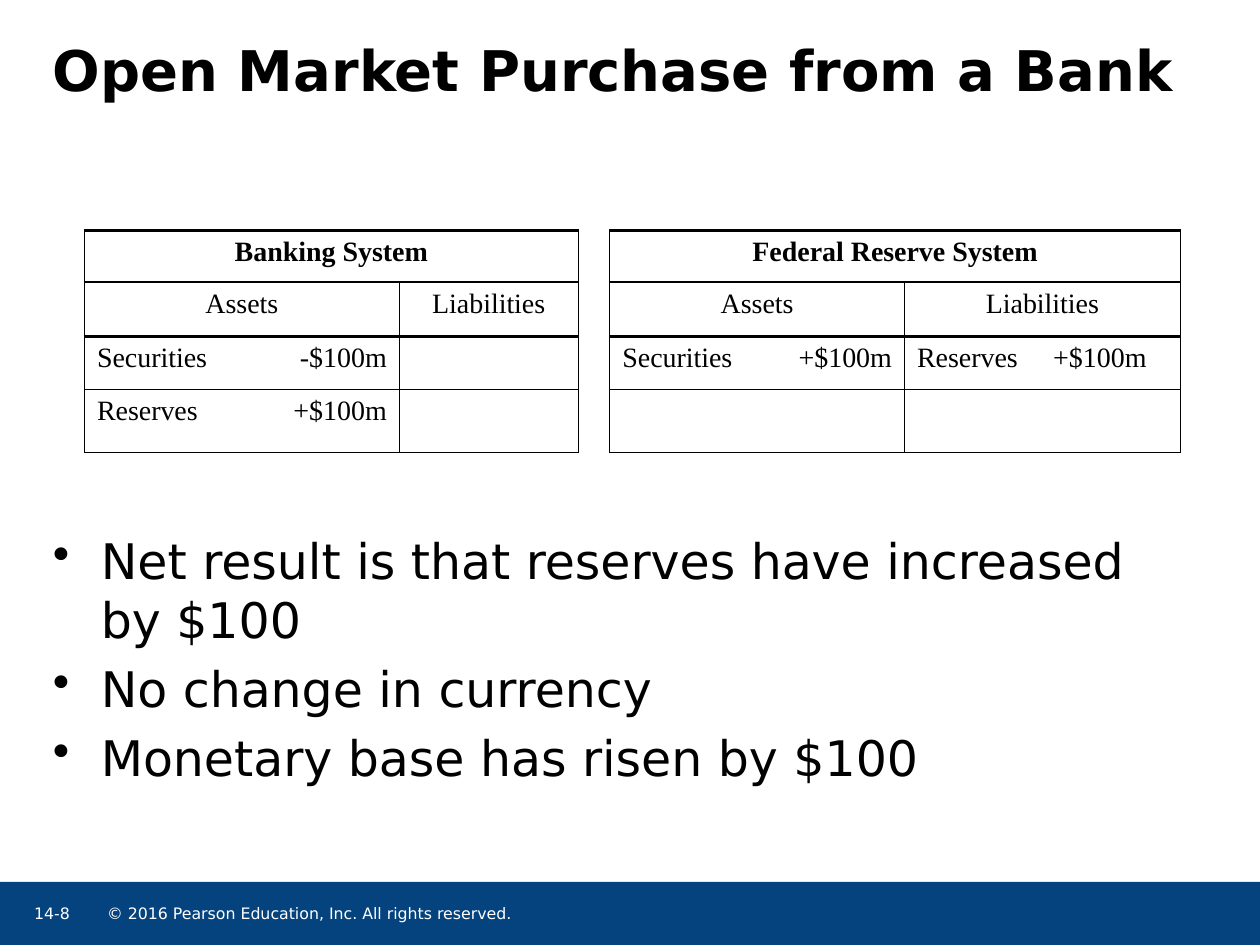
from dataclasses import dataclass

from lxml import etree
from pptx import Presentation
from pptx import util as u
from pptx.dml.color import RGBColor
from pptx.enum import shapes, text
from pptx.oxml import ns

EMU_PER_PX = 9144  # 100 px to the inch
BLACK = RGBColor(0x00, 0x00, 0x00)
WHITE = RGBColor(0xFF, 0xFF, 0xFF)
NAVY = RGBColor(0x04, 0x43, 0x7D)
SANS = "DejaVu Sans"
SERIF = "Times New Roman"
NO_STYLE = "{2D5ABB26-0587-4C30-8999-92F81FD0307C}"

TITLE = {"name": SANS, "size": u.Pt(32), "bold": True}
BODY = {"name": SANS, "size": u.Pt(28)}
FOOTER = {"name": SANS, "size": u.Pt(9)}
CELL = {"name": SERIF, "size": u.Pt(16)}

COLUMN_WIDTHS = [126, 124, 95, 47, 25, 117, 117, 108, 111]
ROW_HEIGHTS = [41, 43, 42, 50]
ROW_SPANS = [4, 2, 1, 1]
GAP_COLUMN = 4
PANEL_COLUMNS = 4


@dataclass(frozen=True)
class Box:
    left: int
    top: int
    width: int
    height: int

    def emu(self) -> list[int]:
        return [px(v) for v in (self.left, self.top, self.width, self.height)]


@dataclass(frozen=True)
class Label:
    box: Box
    lines: tuple[str, ...]
    style: dict
    color: RGBColor = BLACK
    anchor: text.MSO_ANCHOR = text.MSO_ANCHOR.TOP
    bulleted: bool = False


@dataclass(frozen=True)
class Account:
    """One T-account: cell wording row by row, and its outer line widths."""
    first_column: int
    rows: tuple[tuple[str, ...], ...]
    left_line: float
    right_line: float


LABELS = [
    Label(Box(85, 717, 590, 20),
          ("© 2016 Pearson Education, Inc. All rights reserved.",), FOOTER, WHITE),
    Label(Box(27, 717, 39, 20), ("14-8",), FOOTER, WHITE),
    Label(Box(42, 0, 917, 109), ("Open Market Purchase from a Bank",), TITLE,
          anchor=text.MSO_ANCHOR.MIDDLE),
    Label(Box(42, 421, 908, 254),
          ("Net result is that reserves have increased by $100",
           "No change in currency",
           "Monetary base has risen by $100"), BODY, bulleted=True),
]

ACCOUNTS = [
    Account(0, (("Banking System",), ("Assets", "Liabilities"),
                ("Securities", "-$100m", "", ""),
                ("Reserves", "+$100m", "", "")), 1, 0.5),
    Account(5, (("Federal Reserve System",), ("Assets", "Liabilities"),
                ("Securities", "+$100m", "Reserves", "+$100m"),
                ("", "", "", "")), 0.5, 1),
]


def px(value: int) -> int:
    return value * EMU_PER_PX


def set_font(font, style: dict, color: RGBColor) -> None:
    for name, value in style.items():
        setattr(font, name, value)
    font.color.rgb = color


def add_bullet(paragraph) -> None:
    properties = paragraph._p.get_or_add_pPr()
    properties.set("marL", str(px(38)))
    properties.set("indent", str(px(-38)))
    etree.SubElement(properties, ns.qn("a:buChar")).set("char", "•")


def add_label(slide, label: Label) -> None:
    frame = slide.shapes.add_textbox(*label.box.emu()).text_frame
    settings = {"word_wrap": True, "vertical_anchor": label.anchor, "margin_left": 0,
                "margin_top": 0, "margin_right": 0, "margin_bottom": 0}
    for name, value in settings.items():
        setattr(frame, name, value)
    for index, line in enumerate(label.lines):
        paragraph = frame.add_paragraph() if index else frame.paragraphs[0]
        if label.bulleted:
            add_bullet(paragraph)
        if index:
            paragraph.space_before = u.Pt(6)
        paragraph.add_run().text = line
        set_font(paragraph.runs[0].font, label.style, label.color)


def set_borders(cell, widths: dict[str, float]) -> None:
    properties = cell._tc.get_or_add_tcPr()
    for side in "LRTB":
        width = widths.get(side, 0)
        line = etree.SubElement(properties, ns.qn(f"a:ln{side}"))
        if width:
            line.set("w", str(u.Pt(width)))
            fill = etree.SubElement(line, ns.qn("a:solidFill"))
            etree.SubElement(fill, ns.qn("a:srgbClr")).set("val", str(BLACK))
        else:
            etree.SubElement(line, ns.qn("a:noFill"))
    cell.fill.background()


def fill_account(table, account: Account) -> None:
    verticals = {0: account.left_line, 2: 1, PANEL_COLUMNS: account.right_line}
    horizontals = [1.5, 1, 1.5, 1, 1]
    for row, words in enumerate(account.rows):
        span = ROW_SPANS[row]
        for index, word in enumerate(words):
            start = index * span
            column = account.first_column + start
            cell = table.cell(row, column)
            if span > 1:
                cell.merge(table.cell(row, column + span - 1))
            set_borders(cell, {"L": verticals.get(start, 0),
                               "R": verticals.get(start + span, 0),
                               "T": horizontals[row], "B": horizontals[row + 1]})
            paragraph = cell.text_frame.paragraphs[0]
            if span > 1:
                paragraph.alignment = text.PP_ALIGN.CENTER
            elif start == 1:
                paragraph.alignment = text.PP_ALIGN.RIGHT
            if word:
                paragraph.add_run().text = word
                set_font(paragraph.runs[0].font, {**CELL, "bold": row == 0}, BLACK)


def add_accounts(slide) -> None:
    box = Box(67, 183, sum(COLUMN_WIDTHS), sum(ROW_HEIGHTS))
    frame = slide.shapes.add_table(len(ROW_HEIGHTS), len(COLUMN_WIDTHS), *box.emu())
    table = frame.table
    table.first_row = table.horz_banding = False
    table._tbl.tblPr.find(ns.qn("a:tableStyleId")).text = NO_STYLE
    for column, width in zip(table.columns, COLUMN_WIDTHS):
        column.width = px(width)
    for row, height in zip(table.rows, ROW_HEIGHTS):
        row.height = px(height)
    for account in ACCOUNTS:
        fill_account(table, account)

    # Blank gap between the two accounts
    sides = {"L": ACCOUNTS[0].right_line, "R": ACCOUNTS[1].left_line}
    table.cell(0, GAP_COLUMN).merge(table.cell(2, GAP_COLUMN))
    for row in (0, 3):
        set_borders(table.cell(row, GAP_COLUMN), sides)


def main() -> None:
    presentation = Presentation()
    presentation.slide_width, presentation.slide_height = px(1000), px(750)
    slide = presentation.slides.add_slide(presentation.slide_layouts[6])

    # Footer band
    band = slide.shapes.add_shape(shapes.MSO_SHAPE.RECTANGLE, *Box(0, 700, 1000, 50).emu())
    band.shadow.inherit = False
    band.fill.solid()
    band.fill.fore_color.rgb = NAVY
    band.line.fill.background()

    # Footer, title and body text
    for label in LABELS:
        add_label(slide, label)

    # T-accounts
    add_accounts(slide)
    presentation.save("out.pptx")


if __name__ == "__main__":
    main()
